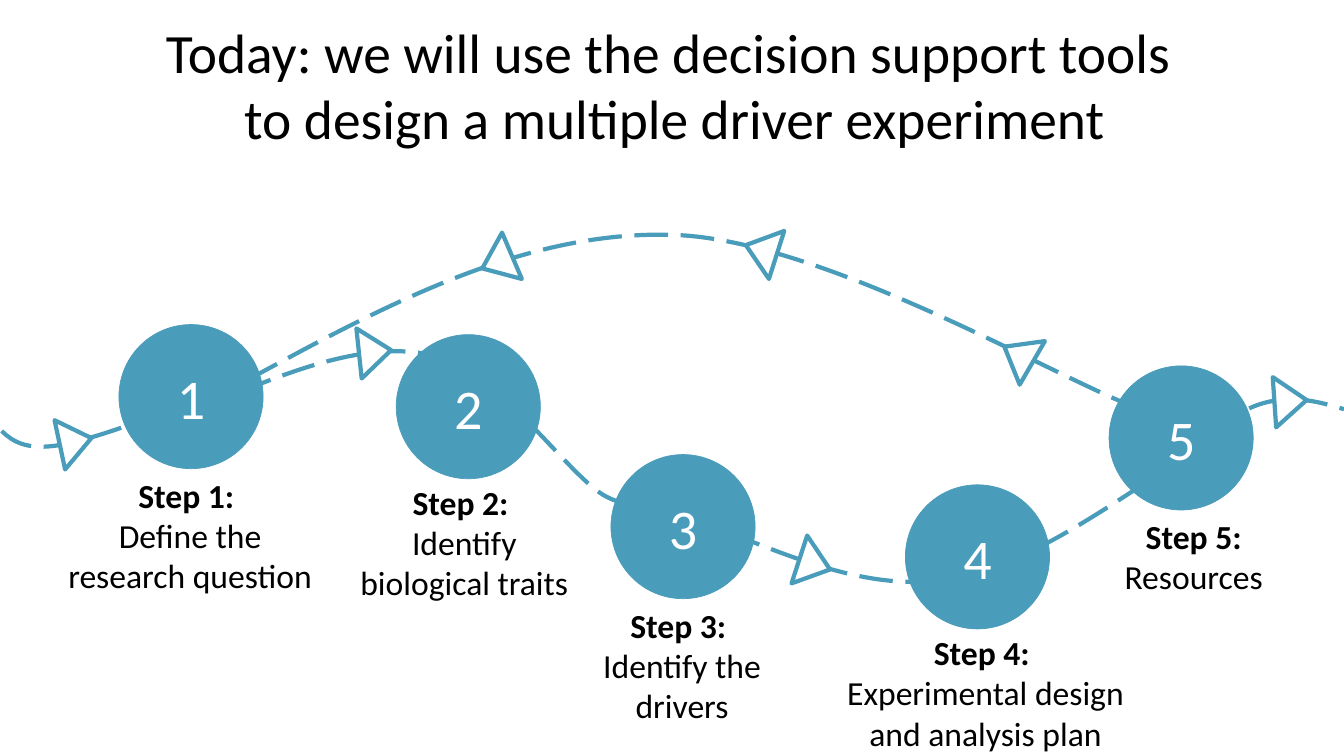
from pptx import Presentation
from pptx.dml.color import RGBColor
from pptx.enum.dml import MSO_LINE
from pptx.enum.shapes import MSO_SHAPE
from pptx.enum.text import MSO_ANCHOR, MSO_AUTO_SIZE, PP_ALIGN
from pptx.oxml.ns import qn
from pptx.util import Inches, Pt
from lxml import etree

TEAL = RGBColor(0x4A, 0x9C, 0xBB)
WHITE = RGBColor(0xFF, 0xFF, 0xFF)
BLACK = RGBColor(0x00, 0x00, 0x00)

deck = Presentation()
deck.slide_width, deck.slide_height = Inches(13.33), Inches(7.5)
page = deck.slides.add_slide(deck.slide_layouts[6])


def add_text(shapes, place, paragraphs, size, color, anchor, auto_size):
    box = shapes.add_textbox(*[Inches(value) for value in place])
    frame = box.text_frame
    settings = {"word_wrap": True, "vertical_anchor": anchor, "auto_size": auto_size}
    for name, value in settings.items():
        setattr(frame, name, value)
    for index, pieces in enumerate(paragraphs):
        para = frame.add_paragraph() if index else frame.paragraphs[0]
        para.alignment = PP_ALIGN.CENTER
        for number, (text, bold) in enumerate(pieces):
            if text.startswith("\n"):
                para.add_line_break()
            span = para.add_run()
            span.text = text.strip("\n")
            font_format = {"name": "Calibri", "size": Pt(size), "bold": bold}
            for name, value in font_format.items():
                setattr(span.font, name, value)
            span.font.color.rgb = color


def style_line(shape, width):
    shape.shadow.inherit = False
    shape.line.color.rgb = TEAL
    shape.line.width = Pt(width)


title = [[("Today: we will use the decision support tools ", False),
          ("\nto design a multiple driver experiment", False)]]
add_text(page.shapes, (0.17, 0.15, 13.04, 1.37), title, 39.6, BLACK,
         MSO_ANCHOR.MIDDLE, MSO_AUTO_SIZE.NONE)

curves = [
    [(11.42, 4.03), (11.77, 4.19), (12.11, 4.35), (11.31, 4.06), (10.52, 3.78),
     (8.15, 2.36), (6.65, 2.33), (5.14, 2.29), (3.72, 3.08), (2.29, 3.86)],
    [(1.95, 4.07), (2.77, 3.72), (3.59, 3.37), (4.27, 3.52), (4.95, 3.66),
     (5.65, 4.75), (6.02, 4.93), (6.4, 5.12), (6.46, 4.87), (6.52, 4.63)],
    [(7.22, 5.28), (7.92, 5.56), (8.62, 5.84), (9.31, 5.76), (9.99, 5.68),
     (10.66, 5.25), (11.33, 4.81)],
    [(11.31, 4.9), (11.71, 4.53), (12.11, 4.17), (12.44, 4.03), (12.78, 3.9),
     (13.06, 3.98), (13.33, 4.06)],
    [(2.06, 3.92), (1.48, 4.15), (0.9, 4.37), (0.56, 4.42), (0.21, 4.47),
     (0.09, 4.35), (-0.03, 4.23)],
]
for points in curves:
    start, *rest = [(Inches(x), Inches(y)) for x, y in points]
    builder = page.shapes.build_freeform(*start)
    builder.add_line_segments(rest, close=False)
    curve = builder.convert_to_shape()
    curve.fill.background()
    style_line(curve, 3)
    curve.line.dash_style = MSO_LINE.LONG_DASH
    segments = list(curve.element.iter(qn("a:lnTo")))
    for first in range(0, len(segments), 3):
        outline = segments[first].getparent()
        bezier = etree.SubElement(outline, qn("a:cubicBezTo"))
        for segment in segments[first:first + 3]:
            bezier.append(segment[0])
            outline.remove(segment)

arrowheads = [(3.47, 3.33, 84), (0.5, 4.22, 77.9), (7.83, 5.44, 108.1),
              (12.55, 3.82, 86.1), (4.68, 2.44, 246.9), (7.3, 2.32, 287.7),
              (9.85, 3.36, 300.1)]
for left, top, angle in arrowheads:
    arrowhead = page.shapes.add_shape(MSO_SHAPE.ISOSCELES_TRIANGLE, Inches(left),
                                      Inches(top), Inches(0.5), Inches(0.32))
    arrowhead.rotation = angle
    arrowhead.fill.solid()
    arrowhead.fill.fore_color.rgb = WHITE
    style_line(arrowhead, 3)

steps = [
    ((1.18, 3.22), (0.51, 4.66, 2.75, 1.31),
     [[("Step 1: ", True)], [("Define the research question", False)]]),
    ((3.93, 3.32), (3.28, 4.73, 2.65, 1.31),
     [[("Step 2: ", True)], [("Identify", False)], [("biological traits", False)]]),
    ((6.06, 4.51), (5.46, 5.95, 2.61, 1.31),
     [[("Step 3: ", True)], [("Identify the drivers", False)]]),
    ((8.98, 4.81), (8.16, 6.22, 3.23, 1.31),
     [[("Step 4: ", True)], [("Experimental design", False)],
      [("and analysis plan", False)]]),
    ((11, 3.63), (10.91, 5.07, 1.86, 0.91),
     [[("Step 5: ", True), ("Resources", False)]]),
]
for number, ((left, top), label_place, label) in enumerate(steps, 1):
    marker = page.shapes.add_group_shape()
    circle = marker.shapes.add_shape(MSO_SHAPE.OVAL, Inches(left), Inches(top),
                                     Inches(1.43), Inches(1.43))
    circle.fill.solid()
    circle.fill.fore_color.rgb = TEAL
    style_line(circle, 0.5)
    add_text(marker.shapes, (left + 0.47, top + 0.33, 0.49, 0.77),
             [[(str(number), False)]], 40, WHITE,
             MSO_ANCHOR.MIDDLE, MSO_AUTO_SIZE.SHAPE_TO_FIT_TEXT)
    add_text(page.shapes, label_place, label, 24, BLACK,
             MSO_ANCHOR.TOP, MSO_AUTO_SIZE.SHAPE_TO_FIT_TEXT)

deck.save("out.pptx")
